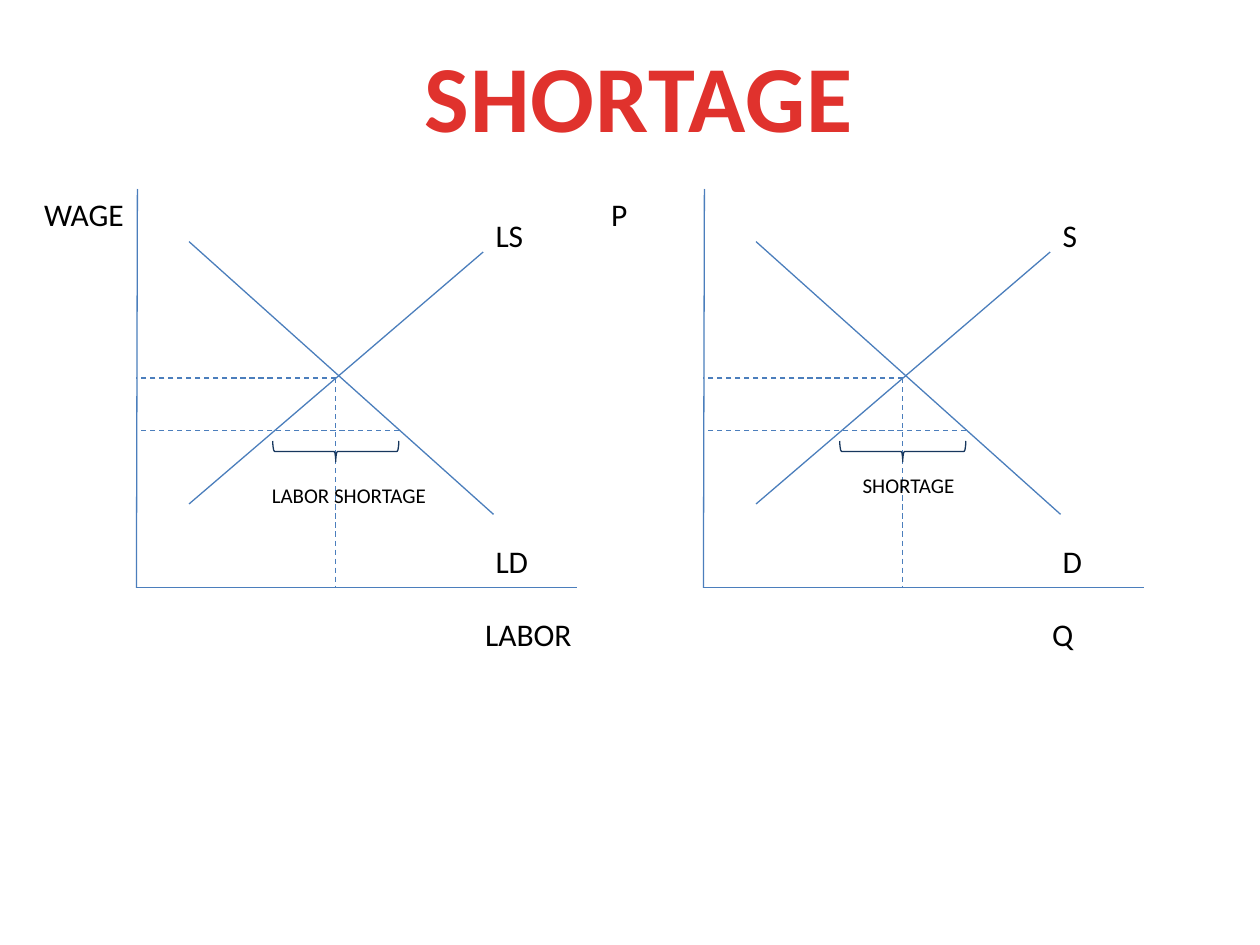
from dataclasses import dataclass

from lxml import etree
from pptx import Presentation
from pptx import util as u
from pptx.dml.color import RGBColor
from pptx.enum import dml, shapes, text
from pptx.oxml import ns


@dataclass(frozen=True)
class Theme:
    face: str = "Calibri"
    red: str = "E0322D"
    ink: str = "000000"
    blue: str = "4B7EBC"
    navy: str = "17375E"
    head: int = 54
    label: int = 18
    note: int = 12
    rule: float = 0.75


THEME = Theme()
STEP = 11.43  # distance between the two graphs

# Lines shared by both graphs: x1, y1, x2, y2, dashed
LINES = [
    (2.77, 3.81, 2.75, 11.85, False),   # vertical axis
    (2.75, 11.85, 11.64, 11.85, False),  # horizontal axis
    (3.81, 4.87, 9.95, 10.37, False),   # demand
    (3.81, 10.16, 9.74, 5.08, False),   # supply
    (6.77, 7.62, 2.75, 7.62, True),     # balance price
    (8.04, 8.68, 2.75, 8.68, True),     # low price
    (6.77, 7.62, 6.77, 11.85, True),    # balance quantity
]

# Left and top of the demand, supply, price and quantity labels
SPOTS = [(9.74, 10.8), (9.74, 4.23), (0.64, 3.81), (9.53, 12.28)]

# Label words and widths, then the note: words, left, top, width
GRAPHS = [
    ([("LD", 1.2), ("LS", 1.1), ("WAGE", 2.13), ("LABOR", 2.26)],
     ("LABOR SHORTAGE", 5.23, 9.61, 3.66)),
    ([("D", 0.92), ("S", 0.82), ("P", 0.84), ("Q", 0.95)],
     ("SHORTAGE", 5.71, 9.41, 2.4)),
]


def add_text(slide, words, box, size, color=THEME.ink, **extra):
    frame = slide.shapes.add_textbox(*map(u.Cm, box)).text_frame
    frame.word_wrap = False
    frame.auto_size = text.MSO_AUTO_SIZE.SHAPE_TO_FIT_TEXT
    run = frame.paragraphs[0].add_run()
    run.text = words
    look = {"name": THEME.face, "size": u.Pt(size), **extra}
    for key, value in look.items():
        setattr(run.font, key, value)
    run.font.color.rgb = RGBColor.from_string(color)
    return run


def set_line(line, color):
    line.color.rgb = RGBColor.from_string(color)
    line.width = u.Pt(THEME.rule)


def add_line(slide, ends, dashed):
    link = slide.shapes.add_connector(
        shapes.MSO_CONNECTOR.STRAIGHT, *map(u.Cm, ends))
    set_line(link.line, THEME.blue)
    if dashed:
        link.line.dash_style = dml.MSO_LINE.DASH
    etree.SubElement(link._element.spPr, ns.qn("a:effectLst"))


def add_brace(slide, shift):
    brace = slide.shapes.add_shape(
        shapes.MSO_SHAPE.LEFT_BRACE,
        *map(u.Cm, (6.56 + shift, 7.83, 0.42, 2.54)))
    brace.rotation = 270
    brace.shadow.inherit = False
    brace.fill.background()
    set_line(brace.line, THEME.navy)


def add_title(slide):
    run = add_text(slide, "SHORTAGE", (8.26, 0.64, 9.25, 2.57),
                   THEME.head, THEME.red, bold=True)
    run._r.get_or_add_rPr().set("spc", "50")
    slide.shapes[-1].text_frame.paragraphs[0].alignment = text.PP_ALIGN.CENTER


def add_graph(slide, shift, labels, note):
    # Axes, curves and guides
    for x1, y1, x2, y2, dashed in LINES:
        add_line(slide, (x1 + shift, y1, x2 + shift, y2), dashed)
    # Axis and curve labels
    for (left, top), (words, width) in zip(SPOTS, labels):
        add_text(slide, words, (left + shift, top, width, 1.02), THEME.label)
    # Shortage gap
    words, left, top, width = note
    add_text(slide, words, (left + shift, top, width, 0.77), THEME.note)
    add_brace(slide, shift)


def main():
    deck = Presentation()
    deck.slide_width, deck.slide_height = u.Cm(25.4), u.Cm(19.05)
    slide = deck.slides.add_slide(deck.slide_layouts[6])
    add_title(slide)
    for index, (labels, note) in enumerate(GRAPHS):
        add_graph(slide, index * STEP, labels, note)
    deck.save("out.pptx")


if __name__ == "__main__":
    main()
